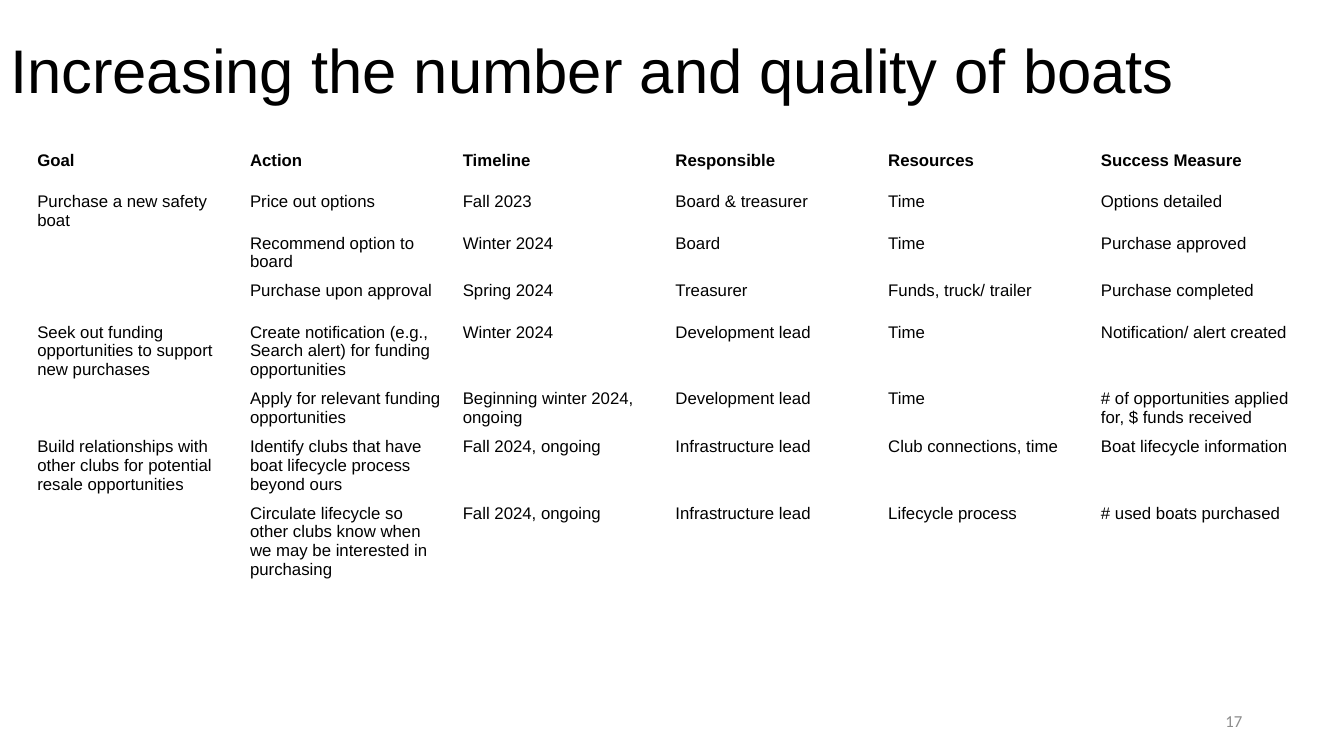
from pptx import Presentation
from pptx.dml.color import RGBColor
from pptx.enum.text import MSO_ANCHOR, MSO_AUTO_SIZE, PP_ALIGN
from pptx.util import Inches, Pt

TITLE = "Increasing the number and quality of boats"
PAGE_NUMBER = "17"
HEADINGS = ["Goal", "Action", "Timeline", "Responsible", "Resources", "Success Measure"]
PLAN = [
    ("Purchase a new safety boat", 3, [
        ("Price out options", "Fall 2023", "Board & treasurer", "Time", "Options detailed"),
        ("Recommend option to board", "Winter 2024", "Board", "Time", "Purchase approved"),
        ("Purchase upon approval", "Spring 2024", "Treasurer", "Funds, truck/ trailer",
         "Purchase completed"),
    ]),
    ("Seek out funding opportunities to support new purchases", 2, [
        ("Create notification (e.g., Search alert) for funding opportunities", "Winter 2024",
         "Development lead", "Time", "Notification/ alert created"),
        ("Apply for relevant funding opportunities", "Beginning winter 2024, ongoing",
         "Development lead", "Time", "# of opportunities applied for, $ funds received"),
    ]),
    ("Build relationships with other clubs for potential resale opportunities", 1, [
        ("Identify clubs that have boat lifecycle process beyond ours", "Fall 2024, ongoing",
         "Infrastructure lead", "Club connections, time", "Boat lifecycle information"),
        ("Circulate lifecycle so other clubs know when we may be interested in purchasing",
         "Fall 2024, ongoing", "Infrastructure lead", "Lifecycle process",
         "# used boats purchased"),
    ]),
]

BLACK = RGBColor(0x00, 0x00, 0x00)
GRAY = RGBColor(0x8C, 0x8C, 0x8C)
COLUMN_WIDTH = 2.11
ROW_HEIGHT = 0.41


def write(frame, text, size=12, font="Arial", color=BLACK, bold=False,
          align=PP_ALIGN.LEFT, spacing=None):
    """Put one formatted paragraph into a text frame."""
    paragraph = frame.paragraphs[0]
    paragraph.alignment = align
    paragraph.line_spacing = spacing
    run = paragraph.add_run()
    run.text = text
    run.font.size = Pt(size)
    run.font.name = font
    run.font.bold = bold
    run.font.color.rgb = color


def add_title(slide):
    """Place the slide title across the full width."""
    title = slide.shapes.title
    title.left, title.top = Inches(0), Inches(0)
    title.width, title.height = Inches(13.33), Inches(1.45)
    title.text_frame.auto_size = MSO_AUTO_SIZE.NONE
    title.text_frame.vertical_anchor = MSO_ANCHOR.MIDDLE
    write(title.text_frame, TITLE, size=44, spacing=0.9)


def add_plan(slide):
    """Build the action plan table, merging each goal over its actions."""
    row_count = 1 + sum(len(actions) for _, _, actions in PLAN)
    plan = slide.shapes.add_table(
        row_count, len(HEADINGS), Inches(0.27), Inches(1.45),
        Inches(COLUMN_WIDTH * len(HEADINGS)), Inches(ROW_HEIGHT * row_count)).table
    plan.first_row = plan.horz_banding = False
    for column in plan.columns:
        column.width = Inches(COLUMN_WIDTH)
    for row in plan.rows:
        row.height = Inches(ROW_HEIGHT)
    for cell in plan.iter_cells():
        cell.fill.background()
        cell.text_frame.paragraphs[0].font.size = Pt(12)

    for column, heading in enumerate(HEADINGS):
        write(plan.cell(0, column).text_frame, heading, bold=True)
    row = 1
    for goal, span, actions in PLAN:
        if span > 1:
            plan.cell(row, 0).merge(plan.cell(row + span - 1, 0))
        write(plan.cell(row, 0).text_frame, goal)
        for action in actions:
            for column, detail in enumerate(action, start=1):
                write(plan.cell(row, column).text_frame, detail)
            row += 1


def add_page_number(slide):
    """Place the page number at the lower right."""
    number = slide.shapes.add_textbox(Inches(9.42), Inches(6.95), Inches(3), Inches(0.4))
    number.text_frame.word_wrap = True
    number.text_frame.vertical_anchor = MSO_ANCHOR.MIDDLE
    write(number.text_frame, PAGE_NUMBER, font="Calibri", color=GRAY, align=PP_ALIGN.RIGHT)


def main():
    """Build and save the slide."""
    deck = Presentation()
    deck.slide_width, deck.slide_height = Inches(13.33), Inches(7.5)
    slide = deck.slides.add_slide(deck.slide_layouts[5])
    add_title(slide)
    add_plan(slide)
    add_page_number(slide)
    deck.save("out.pptx")


if __name__ == "__main__":
    main()
